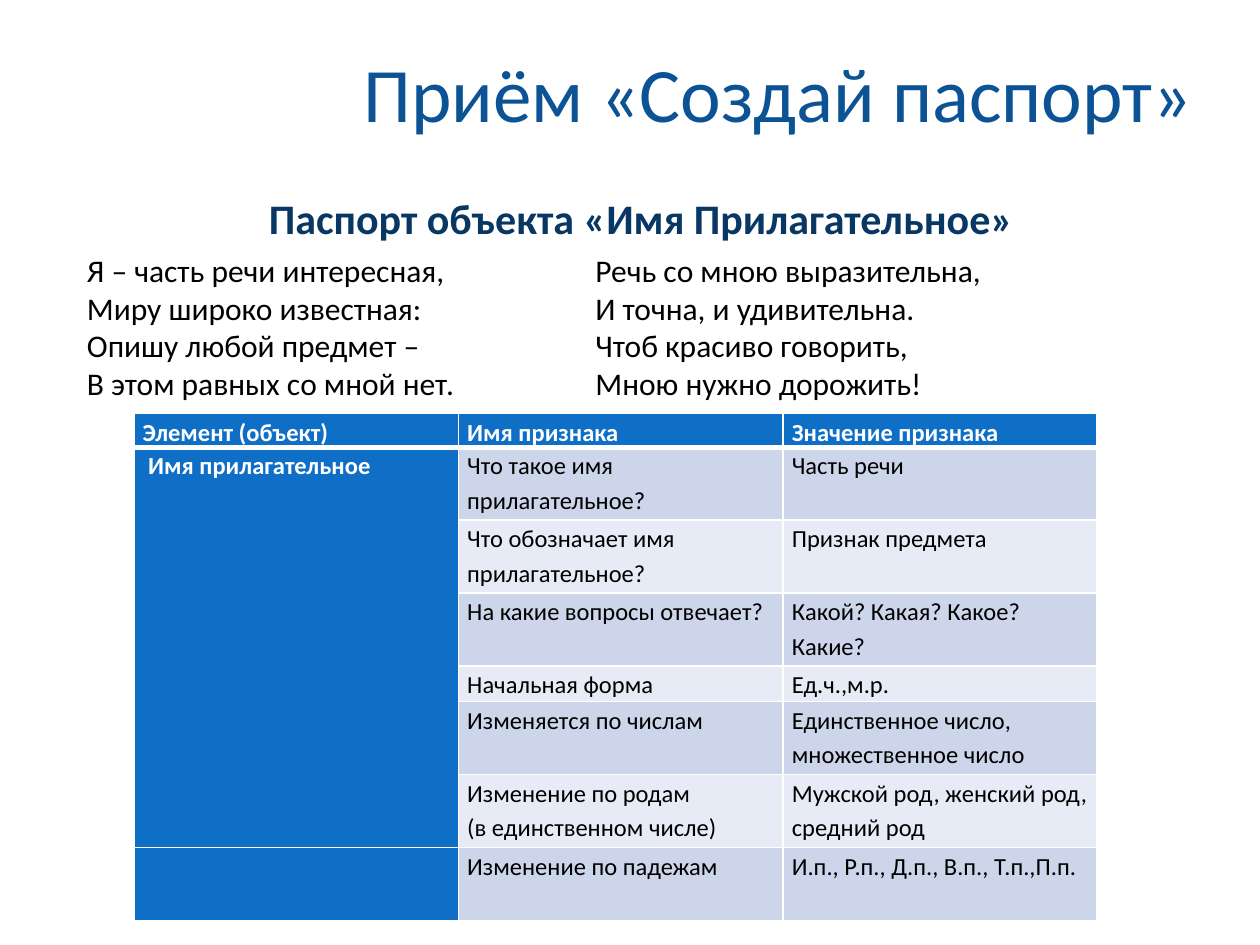
from lxml import etree
from pptx import Presentation
from pptx.dml.color import RGBColor
from pptx.enum.text import MSO_ANCHOR, MSO_AUTO_SIZE, PP_ALIGN
from pptx.oxml.ns import qn
from pptx.util import Pt

CENTER, LEFT = PP_ALIGN.CENTER, PP_ALIGN.LEFT
TOP, MIDDLE = MSO_ANCHOR.TOP, MSO_ANCHOR.MIDDLE
NO_AUTOFIT = MSO_AUTO_SIZE.NONE

FONT = "Calibri"
TITLE_BLUE = RGBColor(0x0B, 0x53, 0x94)
DARK_BLUE = RGBColor(0x08, 0x37, 0x63)
HEADER_BLUE = RGBColor(0x0F, 0x6F, 0xC6)
BANDS = RGBColor(0xCC, 0xD5, 0xEA), RGBColor(0xE7, 0xEB, 0xF5)
BLACK = RGBColor(0, 0, 0)
WHITE = RGBColor(0xFF, 0xFF, 0xFF)

# Content
TITLE = "Приём «Создай паспорт»"
SUBTITLE = "Паспорт объекта «Имя Прилагательное»"
VERSES = [
    ["Я – часть речи интересная,", "Миру широко известная:",
     "Опишу любой предмет –", "В этом равных со мной нет."],
    ["Речь со мною выразительна,", "И точна, и удивительна.",
     "Чтоб красиво говорить,", "Мною нужно дорожить!"],
]
PASSPORT = [
    ("Элемент (объект)", "Имя признака", "Значение признака"),
    ("\u00a0Имя прилагательное", "Что такое имя прилагательное?", "Часть речи"),
    ("", "Что обозначает имя прилагательное?", "Признак предмета"),
    ("", "На какие вопросы отвечает?", "Какой? Какая? Какое? Какие?"),
    ("", "Начальная форма", "Ед.ч.,м.р."),
    ("", "Изменяется по числам", "Единственное число, множественное число"),
    ("", "Изменение по родам\n(в единственном числе)",
     "Мужской род, женский род, средний род"),
    ("", "Изменение по падежам", "И.п., Р.п., Д.п., В.п., Т.п.,П.п."),
]

# Layout, in points
VERSE_LEFT, VERSE_TOP, VERSE_WIDTH, VERSE_HEIGHT = 42.5, 139.7, 290.5, 96
TABLE_LEFT, TABLE_TOP = 76.5, 236.2
COLUMN_WIDTHS = [185.5, 185.5, 179]
HEADER_HEIGHT, SHORT_HEIGHT, TALL_HEIGHT = 18.9, 20.2, 41.7
SHORT_ROW = 4
LAST_MERGED_ROW = 6


def place(shape, left, top, width, height):
    shape.left, shape.top = Pt(left), Pt(top)
    shape.width, shape.height = Pt(width), Pt(height)


def style_text(frame, size, color, bold=False, align=LEFT, spacing=1.0):
    for paragraph in frame.paragraphs:
        paragraph.alignment = align
        paragraph.line_spacing = spacing
        paragraph.space_before = Pt(0)
        for run in paragraph.runs:
            run.font.name = FONT
            run.font.size = Pt(size)
            run.font.bold = bold
            run.font.color.rgb = color


def remove_bullets(frame):
    for paragraph in frame.paragraphs:
        properties = paragraph._p.get_or_add_pPr()
        properties.set("marL", "0")
        properties.set("indent", "0")
        etree.SubElement(properties, qn("a:buNone"))


def add_borders(cell, bottom_width):
    properties = cell._tc.get_or_add_tcPr()
    widths = {"a:lnL": 1, "a:lnR": 1, "a:lnT": 1, "a:lnB": bottom_width}
    for position, (side, width) in enumerate(widths.items()):
        line = etree.Element(qn(side), w=str(Pt(width)))
        fill = etree.SubElement(line, qn("a:solidFill"))
        etree.SubElement(fill, qn("a:srgbClr"), val=str(WHITE))
        properties.insert(position, line)


prs = Presentation()
prs.slide_width, prs.slide_height = Pt(720), Pt(540)
slide = prs.slides.add_slide(prs.slide_layouts[3])  # Two Content

# Title
title, *verse_boxes = list(slide.placeholders)[:3]
place(title, 189.5, 0, 510.5, 105)
title.text_frame.text = TITLE
title.text_frame.vertical_anchor = MIDDLE
title.text_frame.auto_size = NO_AUTOFIT
style_text(title.text_frame, 44, TITLE_BLUE, align=CENTER)

# Subtitle
subtitle = slide.shapes.add_textbox(Pt(14.4), Pt(106.6), Pt(704), Pt(36))
subtitle.text_frame.word_wrap = True
subtitle.text_frame.text = SUBTITLE
style_text(subtitle.text_frame, 24, DARK_BLUE, bold=True, align=CENTER)

# Poem in two columns
for column, (box, lines) in enumerate(zip(verse_boxes, VERSES)):
    place(box, VERSE_LEFT + column * VERSE_WIDTH, VERSE_TOP, VERSE_WIDTH, VERSE_HEIGHT)
    frame = box.text_frame
    frame.text = "\n".join(lines)
    frame.vertical_anchor = TOP
    frame.auto_size = NO_AUTOFIT
    remove_bullets(frame)
    style_text(frame, 18, BLACK)

# Passport table
row_heights = [HEADER_HEIGHT] + [TALL_HEIGHT] * (len(PASSPORT) - 1)
row_heights[SHORT_ROW] = SHORT_HEIGHT
passport = slide.shapes.add_table(
    len(PASSPORT), len(COLUMN_WIDTHS), Pt(TABLE_LEFT), Pt(TABLE_TOP),
    Pt(sum(COLUMN_WIDTHS)), Pt(sum(row_heights))).table
for column, width in zip(passport.columns, COLUMN_WIDTHS):
    column.width = Pt(width)
for row, height in zip(passport.rows, row_heights):
    row.height = Pt(height)

for r, values in enumerate(PASSPORT):
    for c, value in enumerate(values):
        cell = passport.cell(r, c)
        is_heading = r == 0 or c == 0
        cell.margin_left = cell.margin_right = Pt(5)
        cell.margin_top = cell.margin_bottom = Pt(0)
        cell.fill.solid()
        cell.fill.fore_color.rgb = HEADER_BLUE if is_heading else BANDS[(r - 1) % 2]
        add_borders(cell, 3 if r == 0 else 1)
        if value:
            cell.text_frame.text = value
            style_text(cell.text_frame, 14, WHITE if is_heading else BLACK,
                       bold=is_heading, spacing=1.15)
passport.cell(1, 0).merge(passport.cell(LAST_MERGED_ROW, 0))

# Unused footer placeholders
for placeholder in list(slide.placeholders)[3:]:
    placeholder.element.getparent().remove(placeholder.element)

prs.save("out.pptx")
